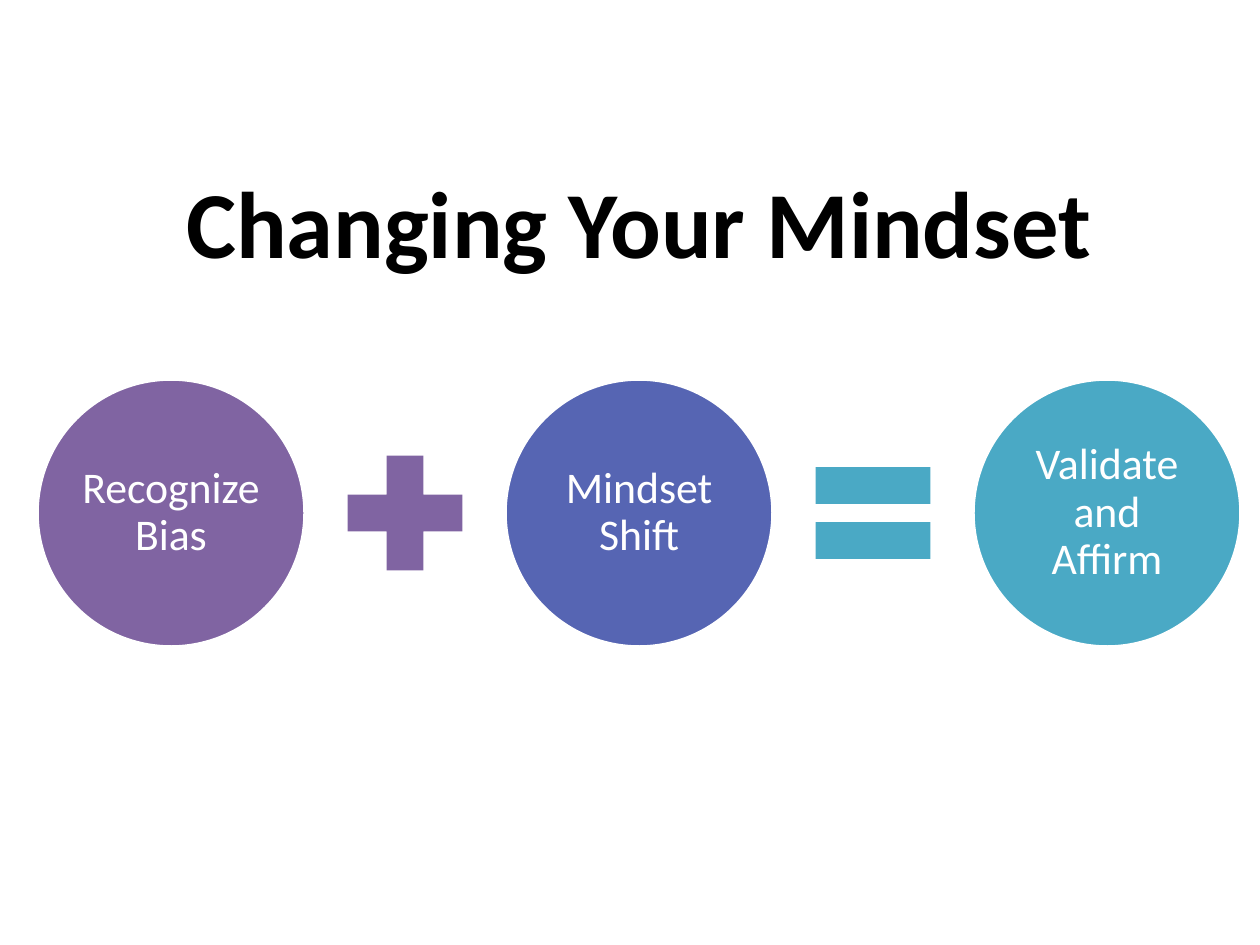
from pptx import Presentation
from pptx import util as u
from pptx.dml.color import RGBColor
from pptx.enum import shapes, text

PX = u.Inches(1) / 126
FONT = "Calibri"
BLACK = RGBColor(0x00, 0x00, 0x00)
WHITE = RGBColor(0xFF, 0xFF, 0xFF)
PURPLE = RGBColor(0x80, 0x64, 0xA2)
INDIGO = RGBColor(0x56, 0x65, 0xB3)
TEAL = RGBColor(0x4A, 0xA9, 0xC5)

CIRCLE_SIZE = 268
SIGN_SIZE = 156
FIRST_LEFT = 37
PITCH = 468
MIDDLE = 513


def px(*lengths):
    return [u.Emu(round(length * PX)) for length in lengths]


def write(frame, words, size, color, bold=False):
    frame.word_wrap = True
    frame.text = words
    paragraph = frame.paragraphs[0]
    paragraph.alignment = text.PP_ALIGN.CENTER
    font = paragraph.runs[0].font
    font.name, font.size, font.bold = FONT, u.Pt(size), bold
    font.color.rgb = color
    return paragraph


def add_title(slide, words):
    box = slide.shapes.add_textbox(*px(91, 158, 1096, 127))
    write(box.text_frame, words, 54, BLACK, bold=True)


def add_centered_shape(slide, kind, center, size, color):
    """Add a filled square-bounded shape centred on the equation's row."""
    shape = slide.shapes.add_shape(
        kind, *px(center - size / 2, MIDDLE - size / 2, size, size))
    shape.shadow.inherit = False
    shape.fill.solid()
    shape.fill.fore_color.rgb = color
    shape.line.fill.background()
    return shape


def add_term(slide, center, words, color):
    circle = add_centered_shape(
        slide, shapes.MSO_SHAPE.OVAL, center, CIRCLE_SIZE, color)
    circle.line.color.rgb = WHITE
    circle.line.width = u.Pt(2)
    frame = circle.text_frame
    frame.vertical_anchor = text.MSO_ANCHOR.MIDDLE
    frame.margin_left = frame.margin_right = u.Inches(0.03)
    frame.margin_top = frame.margin_bottom = u.Inches(0.03)
    write(frame, words, 25, WHITE).line_spacing = 0.9


def add_sign(slide, center, kind, color, adjustments):
    sign = add_centered_shape(slide, kind, center, SIGN_SIZE, color)
    for index, value in enumerate(adjustments):
        sign.adjustments[index] = value


def main():
    presentation = Presentation()
    presentation.slide_width, presentation.slide_height = px(1260, 945)
    slide = presentation.slides.add_slide(presentation.slide_layouts[6])

    terms = [("Recognize Bias", PURPLE), ("Mindset Shift", INDIGO),
             ("Validate and Affirm", TEAL)]
    signs = [(shapes.MSO_SHAPE.MATH_PLUS, PURPLE, [0.235]),
             (shapes.MSO_SHAPE.MATH_EQUAL, TEAL, [0.235, 0.118])]
    first_center = FIRST_LEFT + CIRCLE_SIZE / 2
    for index, term in enumerate(terms):
        add_term(slide, first_center + index * PITCH, *term)
    for index, sign in enumerate(signs):
        add_sign(slide, first_center + (index + 0.5) * PITCH, *sign)

    add_title(slide, "Changing Your Mindset")
    presentation.save("out.pptx")


if __name__ == "__main__":
    main()
